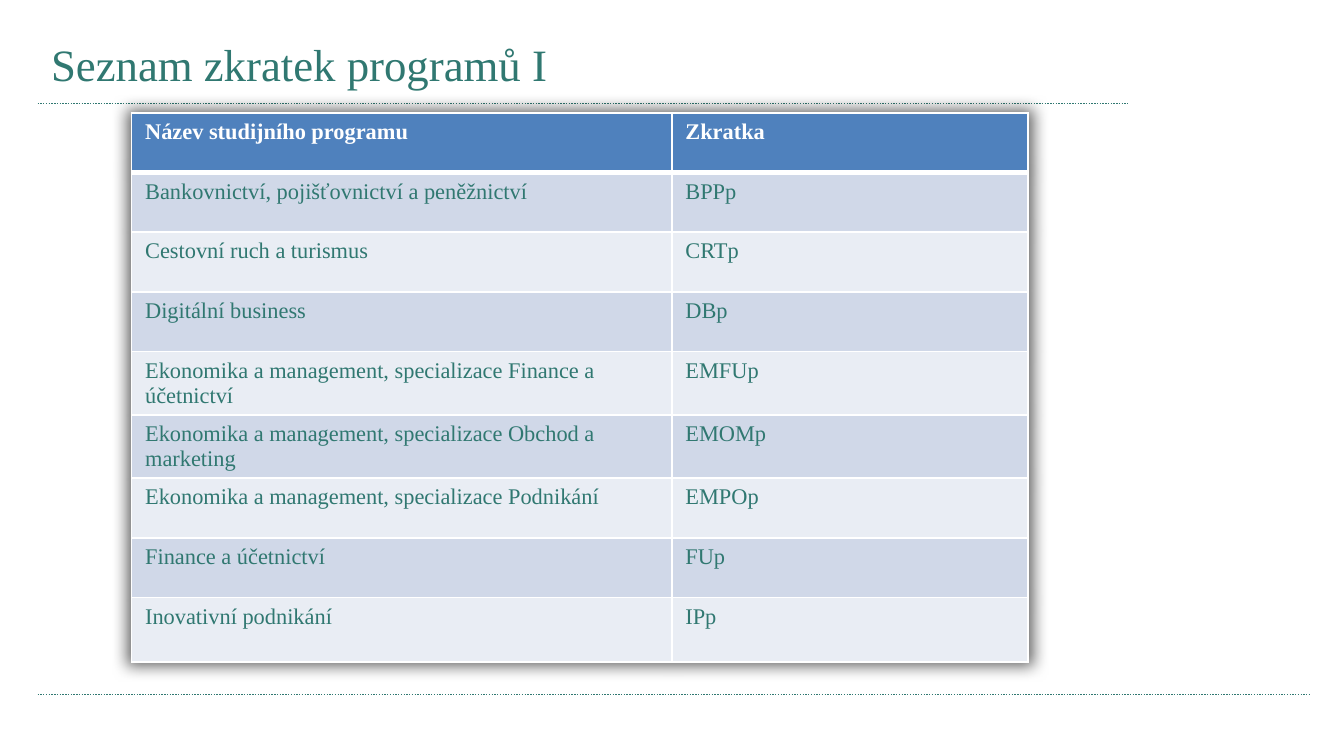
from typing import NamedTuple

from lxml.etree import SubElement
from pptx import Presentation
from pptx.dml.color import RGBColor
from pptx.enum.dml import MSO_LINE_DASH_STYLE as Dash
from pptx.enum.shapes import MSO_CONNECTOR as Connector
from pptx.enum.text import MSO_ANCHOR as Anchor, PP_ALIGN as Align
from pptx.oxml import parse_xml
from pptx.oxml.ns import nsdecls, qn
from pptx.util import Inches, Pt

COLORS = {
    "green": "307871",
    "white": "FFFFFF",
    "header": "4F81BD",
    "odd": "D0D8E8",
    "even": "E9EDF4",
    "shadow": "000000",
}
FONT = "Times New Roman"
PAGE_WIDTH = 10
PAGE_HEIGHT = PAGE_WIDTH * 9 / 16


class Rule(NamedTuple):
    left: float
    right: float
    top: float


class Program(NamedTuple):
    name: str
    code: str


RULES = [Rule(0.28, 8.39, 0.77), Rule(0.28, 9.75, 5.17)]
HEADER = Program("Název studijního programu", "Zkratka")
PROGRAMS = [
    Program("Bankovnictví, pojišťovnictví a peněžnictví", "BPPp"),
    Program("Cestovní ruch a turismus", "CRTp"),
    Program("Digitální business", "DBp"),
    Program("Ekonomika a management, specializace Finance a účetnictví", "EMFUp"),
    Program("Ekonomika a management, specializace Obchod a marketing", "EMOMp"),
    Program("Ekonomika a management, specializace Podnikání", "EMPOp"),
    Program("Finance a účetnictví", "FUp"),
    Program("Inovativní podnikání", "IPp"),
]
COLUMN_WIDTHS = [4.02, 2.65]
ROW_HEIGHT = 4 / 9
LAST_ROW_HEIGHT = 0.48


def rgb(name: str) -> RGBColor:
    return RGBColor.from_string(COLORS[name])


def write(frame, text: str, *, size: float, color: str, bold: bool = False) -> None:
    para = frame.paragraphs[0]
    para.alignment = Align.LEFT
    span = para.add_run()
    span.text = text
    span.font.name = FONT
    span.font.size = Pt(size)
    span.font.bold = bold
    span.font.color.rgb = rgb(color)


def draw_rule(page, rule: Rule) -> None:
    line = page.shapes.add_connector(
        Connector.STRAIGHT, Inches(rule.left), Inches(rule.top),
        Inches(rule.right), Inches(rule.top))
    line.line.color.rgb = rgb("green")
    line.line.width = Pt(0.75)
    line.line.dash_style = Dash.ROUND_DOT
    SubElement(line._element.spPr, qn("a:effectLst"))


def set_borders(cell, bottom: float = 1) -> None:
    """Put white borders before the fill, as the schema orders them."""
    properties = cell._tc.get_or_add_tcPr()
    widths = {"lnL": 1, "lnR": 1, "lnT": 1, "lnB": bottom}
    for index, (side, width) in enumerate(widths.items()):
        properties.insert(index, parse_xml(
            f'<a:{side} {nsdecls("a")} w="{Pt(width)}"><a:solidFill>'
            f'<a:srgbClr val="{COLORS["white"]}"/></a:solidFill></a:{side}>'))


def add_shadow(table) -> None:
    table._tbl.tblPr.insert(0, parse_xml(
        f'<a:effectLst {nsdecls("a")}><a:outerShdw blurRad="{Pt(8)}" dist="0" '
        f'sx="101000" sy="101000" algn="ctr" rotWithShape="0">'
        f'<a:srgbClr val="{COLORS["shadow"]}"><a:alpha val="60000"/></a:srgbClr>'
        '</a:outerShdw></a:effectLst>'))


def draw_table(page, records: list[Program]) -> None:
    heights = [ROW_HEIGHT] * (len(records) - 1) + [LAST_ROW_HEIGHT]
    table = page.shapes.add_table(
        len(records), len(COLUMN_WIDTHS), Inches(0.98), Inches(0.84),
        Inches(sum(COLUMN_WIDTHS)), Inches(sum(heights))).table
    add_shadow(table)
    for column, width in zip(table.columns, COLUMN_WIDTHS):
        column.width = Inches(width)
    for number, (row, height, record) in enumerate(zip(table.rows, heights, records)):
        row.height = Inches(height)
        is_header = number == 0
        fill = "header" if is_header else "odd" if number % 2 else "even"
        for cell, text in zip(row.cells, record):
            cell.fill.solid()
            cell.fill.fore_color.rgb = rgb(fill)
            set_borders(cell, bottom=3 if is_header else 1)
            write(cell.text_frame, text, size=12, bold=is_header,
                  color="white" if is_header else "green")


def draw_title(page, text: str) -> None:
    title = page.shapes.title
    title.left, title.top = Inches(0.28), Inches(0.21)
    title.width, title.height = Inches(4.96), Inches(0.56)
    frame = title.text_frame
    frame.word_wrap = True
    frame.vertical_anchor = Anchor.MIDDLE
    frame.margin_bottom = Inches(0.09)
    write(frame, text, size=24, color="green")


def main() -> None:
    deck = Presentation()
    deck.slide_width, deck.slide_height = Inches(PAGE_WIDTH), Inches(PAGE_HEIGHT)
    page = deck.slides.add_slide(deck.slide_layouts[5])
    for rule in RULES:
        draw_rule(page, rule)
    draw_title(page, "Seznam zkratek programů I")
    draw_table(page, [HEADER, *PROGRAMS])
    deck.save("out.pptx")


if __name__ == "__main__":
    main()
